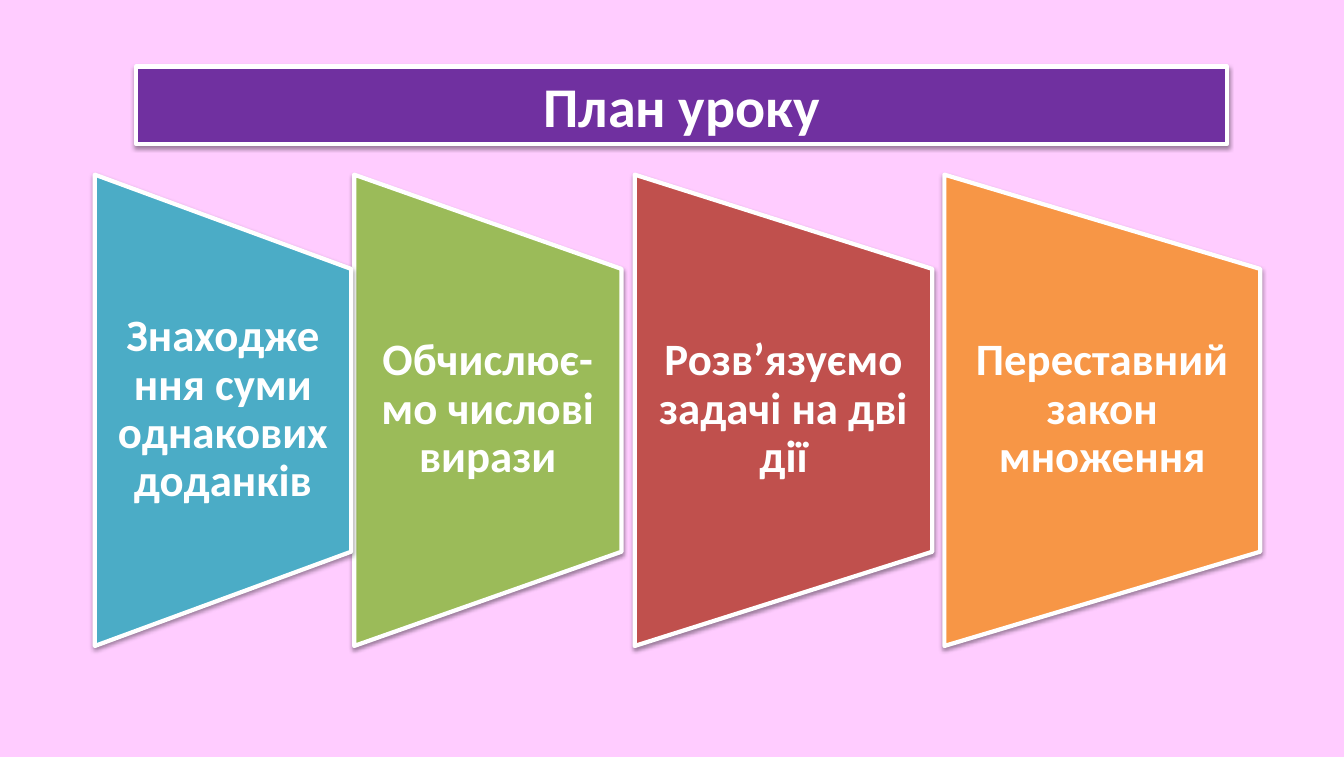
from dataclasses import dataclass

from lxml import etree
from pptx import Presentation
from pptx import util as u
from pptx.dml.color import RGBColor
from pptx.enum import shapes, text
from pptx.oxml import ns


@dataclass(frozen=True)
class Theme:
    back: str = "FFCCFF"
    white: str = "FFFFFF"
    shade: str = "000000"
    title: str = "7030A0"
    teal: str = "4BACC6"
    green: str = "9BBB59"
    red: str = "C0504D"
    orange: str = "F79646"
    font: str = "Calibri"
    big: int = 40
    body: int = 32
    edge: int = 3


THEME = Theme()
TOP, TALL = 1.73, 4.67
TEXT_TOP, TEXT_TALL = 2.66, 2.8
PANELS = [
    (0.94, 2.54, THEME.teal, "Знаходження суми однакових доданків"),
    (3.51, 2.65, THEME.green, "Обчислює-мо числові вирази"),
    (6.29, 2.95, THEME.red, "Розв’язуємо задачі на дві дії"),
    (9.36, 3.13, THEME.orange, "Переставний закон множення"),
]


def apply(item, form):
    """Set each attribute named in the dict."""
    for name, value in form.items():
        setattr(item, name, value)


def shade(shape):
    """Give a shape a soft shadow that falls straight down."""
    shape.shadow.inherit = False
    effects = shape._element.spPr.find(ns.qn("a:effectLst"))
    outer = etree.SubElement(effects, ns.qn("a:outerShdw"), blurRad=str(u.Pt(3.1)),
                             dist=str(u.Pt(1.6)), dir="5400000", rotWithShape="0")
    color = etree.SubElement(outer, ns.qn("a:srgbClr"), val=THEME.shade)
    etree.SubElement(color, ns.qn("a:alpha"), val="38000")


def block(home, kind, box, fill):
    """Add a filled shape with a white edge and a shadow."""
    shape = home.add_shape(kind, *map(u.Inches, box))
    shape.fill.solid()
    shape.fill.fore_color.rgb = RGBColor.from_string(fill)
    shape.line.color.rgb = RGBColor.from_string(THEME.white)
    shape.line.width = u.Pt(THEME.edge)
    shade(shape)
    return shape


def write(shape, words, size, frame, para):
    """Put bold white centred text in a shape."""
    apply(shape.text_frame, {"word_wrap": True,
                             "vertical_anchor": text.MSO_ANCHOR.MIDDLE, **frame})
    line = shape.text_frame.paragraphs[0]
    apply(line, {"text": words, "alignment": text.PP_ALIGN.CENTER, **para})
    apply(line.font, {"name": THEME.font, "size": u.Pt(size), "bold": True})
    line.font.color.rgb = RGBColor.from_string(THEME.white)


def panel(home, left, width, fill, words):
    """Add a trapezoid turned on its side with upright text over it."""
    box = (left + (width - TALL) / 2, TOP + (TALL - width) / 2, TALL, width)
    shape = block(home, shapes.MSO_SHAPE.FLOWCHART_MANUAL_OPERATION, box, fill)
    shape.rotation = 270
    label = home.add_textbox(*map(u.Inches, (left, TEXT_TOP, width, TEXT_TALL)))
    side = u.Inches(0.22)
    frame = {"margin_left": side, "margin_right": side,
             "margin_top": 0, "margin_bottom": 0}
    write(label, words, THEME.body, frame, {"line_spacing": 0.9})


def main():
    """Build the lesson plan slide."""
    deck = Presentation()
    apply(deck, {"slide_width": u.Inches(13.32), "slide_height": u.Inches(7.5)})
    slide = deck.slides.add_slide(deck.slide_layouts[6])
    slide.background.fill.solid()
    slide.background.fill.fore_color.rgb = RGBColor.from_string(THEME.back)
    title = block(slide.shapes, shapes.MSO_SHAPE.RECTANGLE,
                  (1.35, 0.66, 10.81, 0.77), THEME.title)
    write(title, "План уроку", THEME.big,
          {"auto_size": text.MSO_AUTO_SIZE.SHAPE_TO_FIT_TEXT}, {})
    group = slide.shapes.add_group_shape()
    for item in reversed(PANELS):
        panel(group.shapes, *item)
    deck.save("out.pptx")


if __name__ == "__main__":
    main()
